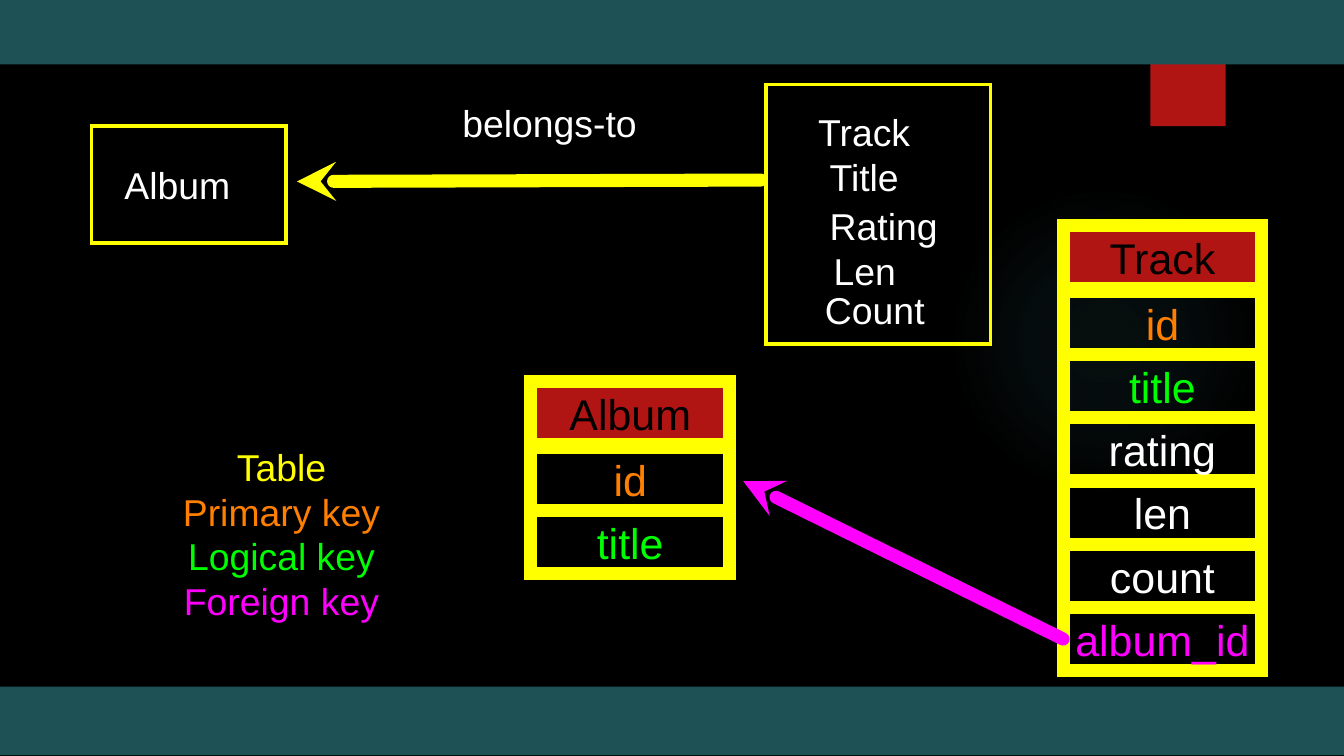
import pptx
import pptx.util
import pptx.dml.color
import pptx.enum.shapes
import pptx.enum.text
import pptx.oxml
import pptx.oxml.ns

Inches, Pt = pptx.util.Inches, pptx.util.Pt
Kind = pptx.enum.shapes.MSO_SHAPE

THEME = {
    "font": "Arial", "body": 20, "cell": 23, "thin": 2, "thick": 7,
    "back": "000000", "band": "1E5155", "red": "B01513", "glow": "50B9C1",
    "table": "FFFF00", "primary": "FF7F00", "logical": "00FF00",
    "foreign": "FF00FF", "plain": "FFFFFF", "head": "000000",
}

# Content: words with the role that colours them
TABLES = [
    (3.95, 2.84, [("Album", "head"), ("id", "primary"), ("title", "logical")]),
    (7.91, 1.68, [("Track", "head"), ("id", "primary"), ("title", "logical"),
                  ("rating", "plain"), ("len", "plain"), ("count", "plain"),
                  ("album_id", "foreign")]),
]
LEGEND = [("Table", "table"), ("Primary key", "primary"),
          ("Logical key", "logical"), ("Foreign key", "foreign")]
# Word, left, top, width, right inset
LABELS = [
    ("Album", 0.91, 1.18, 0.97, 0.15),
    ("belongs-to", 3.31, 0.72, 1.56, 0),
    ("Track", 6.08, 0.79, 0.85, 0.15),
    ("Title", 6.13, 1.12, 0.75, 0.15),
    ("Rating", 6.08, 1.49, 0.99, 0),
    ("Len", 6.19, 1.82, 0.64, 0.15),
    ("Count", 6.11, 2.11, 0.80, 0),
]
BANDS = [(8.56, 0, 0.56, 0.94, "red"),
         (0, 5.11, 10, 0.51, "band"), (0, -0.03, 10, 0.51, "band")]
MODELS = [(5.7, 0.63, 1.67, 1.93), (0.68, 0.94, 1.45, 0.87)]
GLOW = [(0, 7), (36, 6), (69, 0)]  # stop and opacity, in percent
CELL_W, CELL_H, HEAD_GAP = 1.48, 0.47, 0.02

deck = pptx.Presentation()
deck.slide_width = Inches(10)
deck.slide_height = deck.slide_width * 9 // 16
slide = deck.slides.add_slide(deck.slide_layouts[6])


def hue(role):
    return pptx.dml.color.RGBColor.from_string(THEME[role])


def node(tag, inner="", attrs=""):
    ns = pptx.oxml.ns.nsdecls("a")
    return pptx.oxml.parse_xml(f"<a:{tag} {ns} {attrs}>{inner}</a:{tag}>")


def outline(part):
    return part.element.spPr.find(pptx.oxml.ns.qn("a:ln"))


def add_box(left, top, width, height, fill=None, weight=None, kind=Kind.RECTANGLE):
    box = slide.shapes.add_shape(
        kind, Inches(left), Inches(top), Inches(width), Inches(height))
    box.shadow.inherit = False
    if fill:
        box.fill.solid()
        box.fill.fore_color.rgb = hue(fill)
    else:
        box.fill.background()
    if weight:
        box.line.color.rgb = hue("table")
        box.line.width = Pt(THEME[weight])
        outline(box).append(node("miter", attrs='lim="800000"'))
    else:
        box.line.fill.background()
    return box


def write(part, lines, size, inset=0):
    frame = part.text_frame
    frame.word_wrap = True
    frame.vertical_anchor = pptx.enum.text.MSO_ANCHOR.MIDDLE
    frame.margin_left = frame.margin_top = frame.margin_bottom = 0
    frame.margin_right = Inches(inset)
    frame.text = "\n".join(word for word, role in lines)
    for para, (word, role) in zip(frame.paragraphs, lines):
        para.alignment = pptx.enum.text.PP_ALIGN.CENTER
        font = para.runs[0].font
        font.name, font.size = THEME["font"], Pt(THEME[size])
        font.color.rgb = hue(role)


def add_text(left, top, width, height, lines, inset=0):
    box = slide.shapes.add_textbox(
        Inches(left), Inches(top), Inches(width), Inches(height))
    write(box, lines, "body", inset)


def add_arrow(start, end, role):
    arrow = slide.shapes.add_connector(
        pptx.enum.shapes.MSO_CONNECTOR.STRAIGHT,
        *[Inches(n) for n in start + end])
    arrow.line.color.rgb = hue(role)
    arrow.line.width = Pt(THEME["thick"])
    line = outline(arrow)
    line.set("cap", "rnd")
    line.append(node("tailEnd", attrs='type="stealth"'))
    arrow.element.spPr.append(node("effectLst"))
    return arrow


# Background, soft glow and bands
slide.background.fill.solid()
slide.background.fill.fore_color.rgb = hue("back")
glow = add_box(7.06, 1.38, 2.31, 2.31, kind=Kind.OVAL)
stops = "".join(
    f'<a:gs pos="{pos * 1000}"><a:srgbClr val="{THEME["glow"]}">'
    f'<a:alpha val="{alpha * 1000}"/></a:srgbClr></a:gs>' for pos, alpha in GLOW)
clear = glow.element.spPr.find(pptx.oxml.ns.qn("a:noFill"))
clear.addprevious(node(
    "gradFill", f'<a:gsLst>{stops}</a:gsLst><a:path path="circle">'
    '<a:fillToRect l="50000" t="50000" r="50000" b="50000"/></a:path>'))
glow.element.spPr.remove(clear)
for *place, role in BANDS:
    add_box(*place, fill=role)

# Model boxes, their labels and the relation
for place in MODELS:
    add_box(*place, weight="thin")
add_arrow((5.66, 1.34), (2.21, 1.35), "table")
for word, left, top, width, inset in LABELS:
    add_text(left, top, width, 0.38, [(word, "plain")], inset)

# Database tables, one cell per column
for left, top, cells in TABLES:
    for i, (word, role) in enumerate(cells):
        gap = HEAD_GAP if i else 0
        cell = add_box(left, top + gap + i * CELL_H, CELL_W, CELL_H,
                       None if i else "red", "thick")
        write(cell, [(word, role)], "cell")

# Foreign key, from the last Track cell to Album
key = add_arrow((7.91, 4.77), (5.53, 3.58), "foreign")
key.begin_connect(cell, 1)

# Legend
add_text(1.12, 3.3, 1.95, 1.34, LEGEND)

deck.save("out.pptx")
